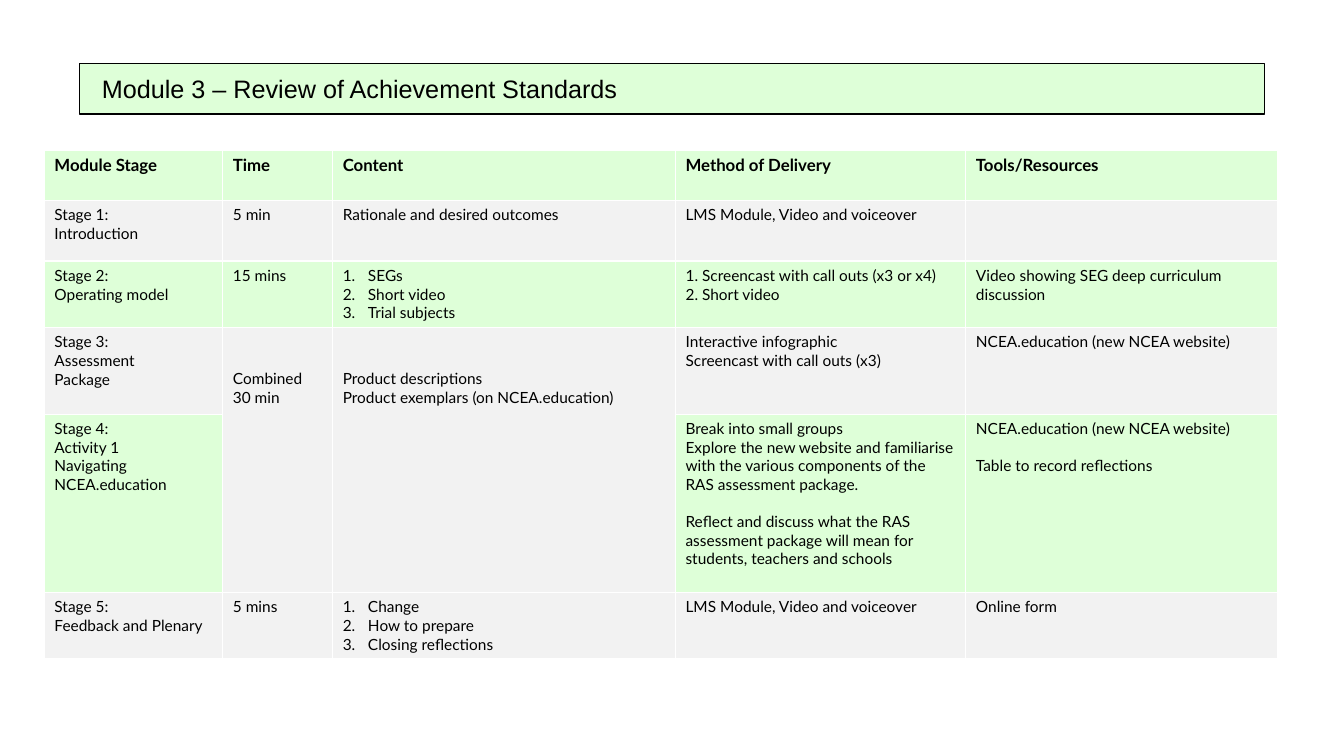
import pptx
import pptx.util
import pptx.dml.color
import pptx.enum.shapes
import pptx.enum.text
import pptx.oxml.ns
import lxml.etree

Inches = pptx.util.Inches
COLORS = {"green": "DEFFD8", "grey": "F2F2F2", "black": "000000"}
LINE_HEIGHT = 13.2


def color(name):
    return pptx.dml.color.RGBColor.from_string(COLORS[name])


def write_text(text_frame, text, font="Lato", size=11, bold=False, numbered=False, line_spacing=None):
    text_frame.word_wrap = True
    for block_index, block in enumerate(text.split("\n\n")):
        for line_index, line in enumerate(block.split("\n")):
            first = block_index == line_index == 0
            paragraph = text_frame.paragraphs[0] if first else text_frame.add_paragraph()
            paragraph.alignment = pptx.enum.text.PP_ALIGN.LEFT
            if line_spacing:
                paragraph.line_spacing = line_spacing
            if block_index and line_index == 0:
                paragraph.space_before = pptx.util.Pt(LINE_HEIGHT)
            if numbered:
                properties = paragraph._p.get_or_add_pPr()
                properties.set("marL", str(Inches(0.25)))
                properties.set("indent", str(Inches(-0.25)))
                bullet = lxml.etree.SubElement(properties, pptx.oxml.ns.qn("a:buAutoNum"))
                bullet.set("type", "arabicPeriod")
            run = paragraph.add_run()
            run.text = line
            run.font.name = font
            run.font.size = pptx.util.Pt(size)
            run.font.bold = bold
            run.font.color.rgb = color("black")


presentation = pptx.Presentation()
presentation.slide_width = Inches(13.33)
presentation.slide_height = Inches(7.5)
slide = presentation.slides.add_slide(presentation.slide_layouts[5])

band = slide.shapes.add_shape(
    pptx.enum.shapes.MSO_SHAPE.RECTANGLE, Inches(0.79), Inches(0.63), Inches(11.75), Inches(0.5))
band.shadow.inherit = False
band.fill.solid()
band.fill.fore_color.rgb = color("green")
band.line.color.rgb = color("black")
band.line.width = pptx.util.Pt(1)

title = slide.shapes.title
title.left, title.top = Inches(0.91), Inches(0.65)
title.width, title.height = Inches(11.28), Inches(0.5)
title.text_frame.auto_size = pptx.enum.text.MSO_AUTO_SIZE.NONE
title.text_frame.vertical_anchor = pptx.enum.text.MSO_ANCHOR.MIDDLE
write_text(title.text_frame, "Module 3 – Review of Achievement Standards",
           font="Arial", size=18, line_spacing=0.9)
title.element.addprevious(band.element)

rows = [
    ["Module Stage", "Time", "Content", "Method of Delivery", "Tools/Resources"],
    ["Stage 1:\nIntroduction", "5 min", "Rationale and desired outcomes",
     "LMS Module, Video and voiceover", ""],
    ["Stage 2:\nOperating model", "15 mins", "SEGs\nShort video\nTrial subjects",
     "1. Screencast with call outs (x3 or x4)\n2. Short video",
     "Video showing SEG deep curriculum discussion"],
    ["Stage 3:\nAssessment\nPackage", "Combined 30 min",
     "Product descriptions\nProduct exemplars (on NCEA.education)",
     "Interactive infographic\nScreencast with call outs (x3)",
     "NCEA.education (new NCEA website)"],
    ["Stage 4:\nActivity 1\nNavigating NCEA.education", "", "",
     "Break into small groups\nExplore the new website and familiarise with the various "
     "components of the RAS assessment package.\n\nReflect and discuss what the RAS "
     "assessment package will mean for students, teachers and schools",
     "NCEA.education (new NCEA website)\n\nTable to record reflections"],
    ["Stage 5:\nFeedback and Plenary", "5 mins", "Change\nHow to prepare\nClosing reflections",
     "LMS Module, Video and voiceover", "Online form"],
]
column_widths = [1.77, 1.09, 3.4, 2.88, 3.09]
row_heights = [0.5, 0.6, 0.66, 0.86, 1.77, 0.65]
numbered_cells = {(2, 2), (5, 2)}
merged_columns = (1, 2)

table = slide.shapes.add_table(
    len(rows), len(column_widths), Inches(0.44), Inches(1.49),
    Inches(sum(column_widths)), Inches(sum(row_heights))).table
for column, width in zip(table.columns, column_widths):
    column.width = Inches(width)
for row, height in zip(table.rows, row_heights):
    row.height = Inches(height)

for row_index, texts in enumerate(rows):
    header = row_index == 0
    for column_index, text in enumerate(texts):
        cell = table.cell(row_index, column_index)
        cell.fill.solid()
        cell.fill.fore_color.rgb = color("grey" if row_index % 2 else "green")
        if text:
            write_text(cell.text_frame, text, size=12 if header else 11, bold=header,
                       numbered=(row_index, column_index) in numbered_cells)

for column_index in merged_columns:
    cell = table.cell(3, column_index)
    cell.merge(table.cell(4, column_index))
    cell.margin_top = Inches(0.05) + pptx.util.Pt(2 * LINE_HEIGHT)

presentation.save("out.pptx")
